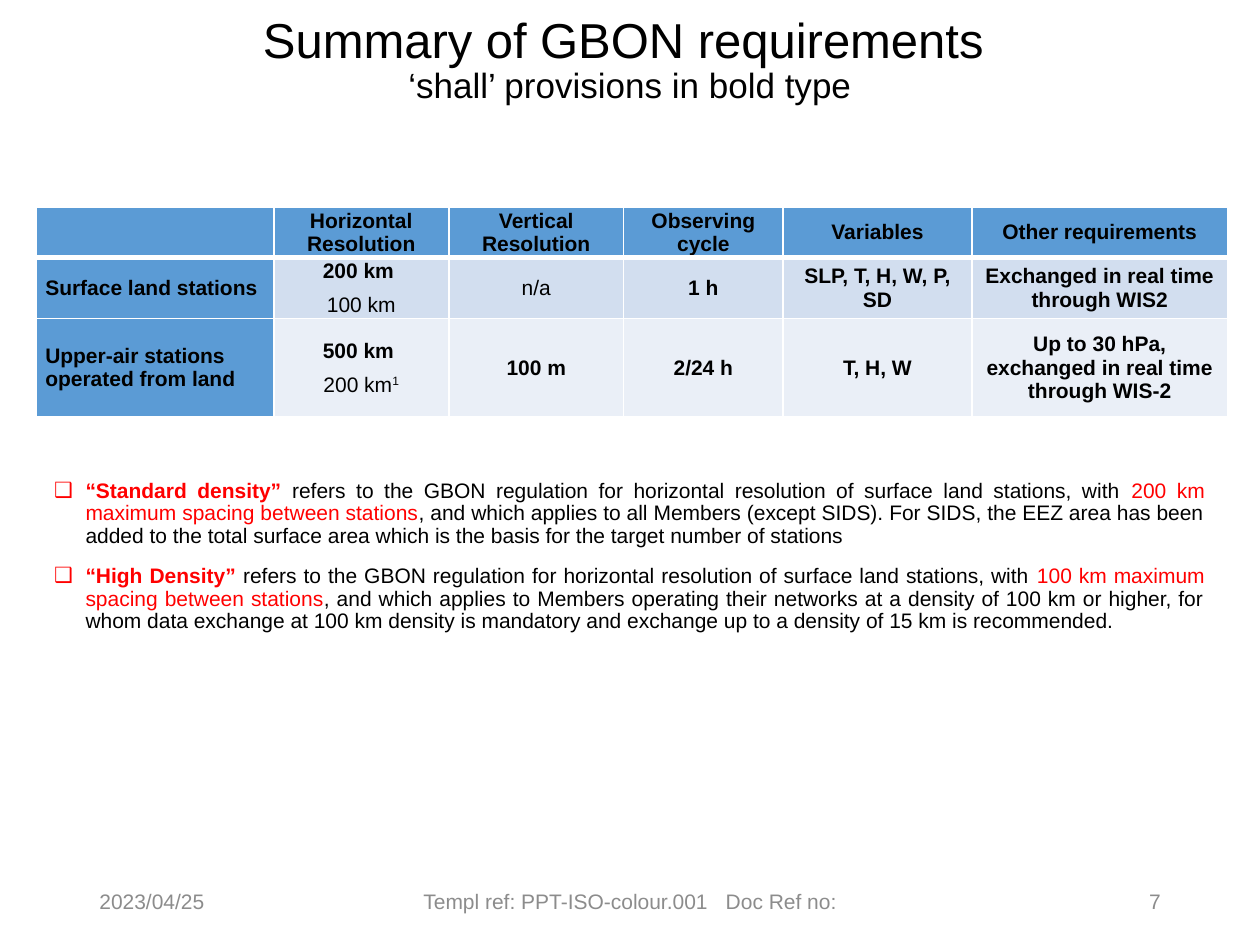
"""Build the slide that sums up the GBON requirements."""
from dataclasses import dataclass

from lxml import etree
from pptx import Presentation, dml, util as u
from pptx.dml.color import RGBColor
from pptx.enum import text as t
from pptx.oxml import ns

BLACK = RGBColor(0x00, 0x00, 0x00)
WHITE = RGBColor(0xFF, 0xFF, 0xFF)
RED = RGBColor(0xFF, 0x00, 0x00)
GREY = RGBColor(0x8C, 0x8C, 0x8C)
BLUE = RGBColor(0x5B, 0x9B, 0xD5)
PALE = RGBColor(0xD2, 0xDE, 0xEF)
PALER = RGBColor(0xEA, 0xEF, 0xF7)
FACE = "Arial"
LEFT, MID, RIGHT, FULL = (t.PP_ALIGN.LEFT, t.PP_ALIGN.CENTER,
                          t.PP_ALIGN.RIGHT, t.PP_ALIGN.JUSTIFY)


@dataclass(frozen=True)
class Run:
    """A piece of text in one style."""
    text: str
    color: RGBColor = BLACK
    bold: bool = False
    size: float = 12
    lift: int = 0
    track: int = 0


@dataclass(frozen=True)
class Para:
    """A paragraph made of runs."""
    runs: tuple
    align: t.PP_ALIGN = MID
    line: float = 1.0
    bullet: str = ""


@dataclass(frozen=True)
class Box:
    """A text box with its place in points."""
    left: float
    top: float
    width: float
    height: float
    paras: tuple
    anchor: t.MSO_ANCHOR = t.MSO_ANCHOR.MIDDLE


def add_run(para, run: Run) -> None:
    """Add one styled run to a paragraph."""
    piece = para.add_run()
    piece.text = run.text
    font = piece.font
    font.name, font.size, font.bold = FACE, u.Pt(run.size), run.bold
    font.color.rgb = run.color
    props = piece._r.get_or_add_rPr()
    if run.lift:
        props.set("baseline", str(run.lift * 1000))
    if run.track:
        props.set("spc", str(run.track))


def add_bullet(para, mark: str) -> None:
    """Give a paragraph a hanging bullet."""
    props = para._p.get_or_add_pPr()
    props.set("marL", str(u.Pt(18)))
    props.set("indent", str(-u.Pt(18)))
    etree.SubElement(props, ns.qn("a:buFont")).set("typeface", FACE)
    etree.SubElement(props, ns.qn("a:buChar")).set("char", mark)


def add_paras(frame, paras: tuple, gap: float) -> None:
    """Fill a text frame, with a gap between paragraphs."""
    for i, item in enumerate(paras):
        para = frame.add_paragraph() if i else frame.paragraphs[0]
        if item.bullet:
            add_bullet(para, item.bullet)
        para.alignment, para.line_spacing = item.align, item.line
        para.space_before = u.Pt(gap if i else 0)
        for run in item.runs:
            if run is BREAK:
                para.add_line_break()
            else:
                add_run(para, run)


def add_box(slide, box: Box):
    """Draw a text box."""
    shape = slide.shapes.add_textbox(*map(u.Pt, (box.left, box.top, box.width, box.height)))
    frame = shape.text_frame
    frame.word_wrap, frame.vertical_anchor = True, box.anchor
    add_paras(frame, box.paras, 10)
    return shape


def add_edge(props, side: str, width: float) -> None:
    """Add a white border to one side of a cell."""
    line = etree.SubElement(props, ns.qn(f"a:ln{side}"), w=str(u.Pt(width)))
    fill = etree.SubElement(line, ns.qn("a:solidFill"))
    etree.SubElement(fill, ns.qn("a:srgbClr"), val=str(WHITE))


def add_cell(cell, paras: tuple, fill: RGBColor, top: float, base: float) -> None:
    """Style and fill one table cell."""
    props = cell._tc.get_or_add_tcPr()
    for side, width in zip("LRTB", (1, 1, top, base)):
        add_edge(props, side, width)
    cell.fill.solid()
    cell.fill.fore_color.rgb = fill
    cell.margin_left = cell.margin_right = u.Pt(5.4)
    cell.margin_top = cell.margin_bottom = 0
    cell.vertical_anchor = t.MSO_ANCHOR.MIDDLE
    add_paras(cell.text_frame, paras, 6)


def add_grid(slide) -> None:
    """Draw the table of requirements."""
    grid = slide.shapes.add_table(len(ROWS), len(COLS), u.Pt(20.5), u.Pt(118.4),
                                  u.Pt(sum(COLS)), u.Pt(sum(TALL))).table
    for col, width in zip(grid.columns, COLS):
        col.width = u.Pt(width)
    for r, (row, tall, shade) in enumerate(zip(ROWS, TALL, SHADES)):
        grid.rows[r].height = u.Pt(tall)
        for c, paras in enumerate(row):
            add_cell(grid.cell(r, c), paras, shade if c else BLUE,
                     3 if r == 1 else 1, 3 if r == 0 else 1)


def strong(text: str, align: t.PP_ALIGN = MID) -> tuple:
    """Return a cell with one bold paragraph."""
    return (Para((Run(text, bold=True),), align),)


def plain(*runs: Run) -> tuple:
    """Return a cell with one paragraph of the given runs."""
    return (Para(runs),)


def point(term: str, limit: str, rest: str) -> Para:
    """Return a bulleted definition."""
    return Para((Run(term, RED, True), Run(REFERS), Run(limit, RED), Run(rest)),
                FULL, 0.9, "❑")


BREAK = Run("")
REFERS = ("refers to the GBON regulation for horizontal resolution of "
          "surface land stations, with ")
COLS = (136, 100, 100, 91, 108, 146)
TALL = (28.8, 34.6, 56.2)
SHADES = (BLUE, PALE, PALER)
HEADS = ("Horizontal Resolution", "Vertical Resolution", "Observing cycle",
         "Variables", "Other requirements")
ROWS = (
    ((), *map(strong, HEADS)),
    (strong("Surface land stations", LEFT),
     strong("200 km ") + plain(Run("100 km")),
     plain(Run("n/a")),
     *map(strong, ("1 h", "SLP, T, H, W, P, SD", "Exchanged in real time through WIS2"))),
    (strong("Upper-air stations operated from land", LEFT),
     strong("500 km ") + plain(Run("200 km"), Run("1", lift=30)),
     *map(strong, ("100 m", "2/24 h", "T, H, W",
                   "Up to 30 hPa, exchanged in real time through WIS-2"))),
)
TITLE = Box(49.7, 10.8, 620.6, 48.2, (Para(
    (Run("Summary of GBON requirements ", size=28), BREAK,
     Run("‘shall’ provisions in bold type", size=20)), line=0.9),))
NOTES = Box(23.8, 270.7, 671.8, 110.2, (
    point("“Standard density” ", "200 km maximum spacing between stations",
          ", and which applies to all Members (except SIDS). For SIDS, the EEZ area has "
          "been added to the total surface area which is the basis for the target "
          "number of stations"),
    point("“High Density” ", "100 km maximum spacing between stations",
          ", and which applies to Members operating their networks at a density of "
          "100 km or higher, for whom data exchange at 100 km density is mandatory and "
          "exchange up to a density of 15 km is recommended."),
), t.MSO_ANCHOR.TOP)
FEET = (
    Box(49.7, 500.4, 162, 28.8, (Para((Run("2023/04/25", GREY),), LEFT),)),
    Box(218.9, 500.4, 282.2, 28.8, (Para((
        Run("Templ ref: PPT-ISO-colour.001", GREY), Run(" ", GREY, track=670),
        Run("Doc Ref no:", GREY))),)),
    Box(508.3, 500.4, 162, 28.8, (Para((Run("7", GREY),), RIGHT),)),
)


def main() -> None:
    """Build and save the slide."""
    deck = Presentation()
    deck.slide_width, deck.slide_height = u.Pt(720), u.Pt(540)
    slide = deck.slides.add_slide(deck.slide_layouts[6])
    add_box(slide, TITLE)
    notes = add_box(slide, NOTES)
    notes.fill.solid()
    notes.fill.fore_color.rgb = WHITE
    for foot in FEET:
        add_box(slide, foot)
    add_grid(slide)
    deck.save("out.pptx")


if __name__ == "__main__":
    main()
